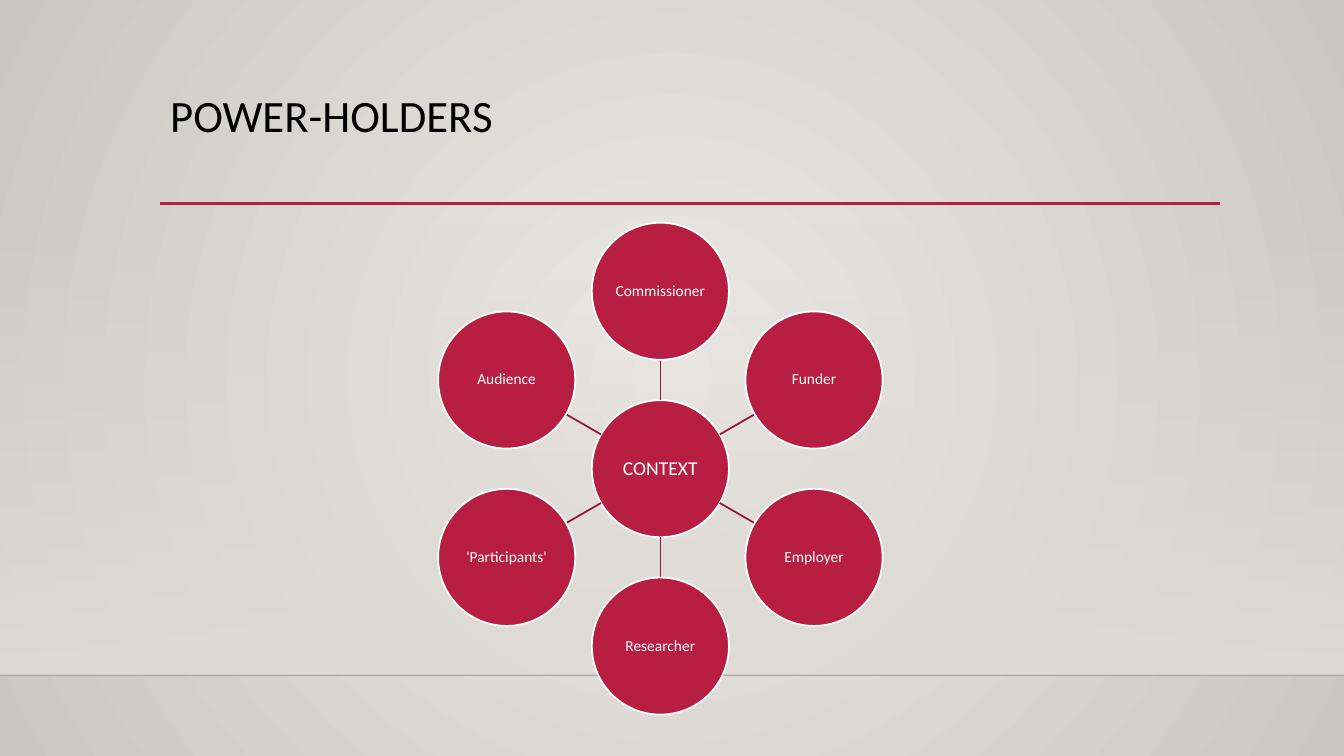
from math import cos, radians, sin

from pptx import Presentation
from pptx.dml.color import RGBColor
from pptx.enum.shapes import MSO_CONNECTOR as Link, MSO_SHAPE as Shape
from pptx.enum.text import MSO_ANCHOR as Anchor, PP_ALIGN as Align
from pptx.oxml import parse_xml
from pptx.oxml.ns import nsdecls, qn
from pptx.util import Inches, Pt

TITLE = "POWER-HOLDERS"
HUB = "CONTEXT"
HOLDERS = ["Commissioner", "Funder", "Employer", "Researcher", "'Participants'", "Audience"]

FONT = "Calibri"
RED, DARK, WHITE, BLACK = "B71E42", "931835", "FFFFFF", "000000"
GLOW, EDGE, BAND, FLOOR = "ECEAE7", "CAC7C1", "DFDBD5", "000001"

WIDE, HIGH = 13.33, 7.5
MID_X, MID_Y = 6.55, 4.65
RADIUS, ORBIT = 0.68, 1.76


def color(code):
    return RGBColor.from_string(code)


def fade(node, share):
    rgb = node.find(".//" + qn("a:srgbClr"))
    rgb.append(parse_xml(f'<a:alpha {nsdecls("a")} val="{share * 1000}"/>'))


def blend(fill, start, end):
    fill.gradient()
    for stop, code in zip(fill.gradient_stops, (start, end)):
        stop.color.rgb = color(code)


def rule(x1, y1, x2, y2, code, width):
    line = slide.shapes.add_connector(
        Link.STRAIGHT, Inches(x1), Inches(y1), Inches(x2), Inches(y2))
    line.line.color.rgb = color(code)
    line.line.width = Pt(width)
    line._element.spPr.append(parse_xml(f'<a:effectLst {nsdecls("a")}/>'))
    return line


def write(para, text, size, code):
    para.text = text
    para.line_spacing = 0.9
    para.font.name = FONT
    para.font.size = Pt(size)
    para.font.color.rgb = color(code)


def disc(x, y, text, size):
    shape = slide.shapes.add_shape(
        Shape.OVAL, Inches(x - RADIUS), Inches(y - RADIUS),
        Inches(2 * RADIUS), Inches(2 * RADIUS))
    shape.shadow.inherit = False
    shape.fill.solid()
    shape.fill.fore_color.rgb = color(RED)
    shape.line.color.rgb = color(WHITE)
    shape.line.width = Pt(1.25)
    frame = shape.text_frame
    frame.word_wrap = True
    frame.vertical_anchor = Anchor.MIDDLE
    frame.margin_left = frame.margin_right = Inches(0.01)
    frame.margin_top = frame.margin_bottom = Inches(0.01)
    para = frame.paragraphs[0]
    para.alignment = Align.CENTER
    write(para, text, size, WHITE)


def polar(reach, angle):
    return MID_X + reach * cos(angle), MID_Y + reach * sin(angle)


deck = Presentation()
deck.slide_width, deck.slide_height = Inches(WIDE), Inches(HIGH)
slide = deck.slides.add_slide(deck.slide_layouts[6])

blend(slide.background.fill, GLOW, EDGE)
lin = slide.element.find(".//" + qn("a:lin"))
lin.getparent().replace(lin, parse_xml(
    f'<a:path {nsdecls("a")} path="circle">'
    '<a:fillToRect l="50000" t="50000" r="50000" b="50000"/></a:path>'))

wall = slide.shapes.add_shape(
    Shape.RECTANGLE, 0, Inches(2.21), Inches(WIDE), Inches(4.49))
wall.shadow.inherit = False
wall.line.fill.background()
blend(wall.fill, BAND, BAND)
wall.fill.gradient_angle = 270
fade(wall._element.spPr, 0)

floor = rule(0, 6.7, WIDE, 6.7, FLOOR, 1)
fade(floor._element.spPr, 20)
rule(1.59, 2.02, 12.1, 2.02, RED, 2.5)

head = slide.shapes.add_textbox(Inches(1.59), Inches(0.88), Inches(10.5), Inches(1.15))
head.text_frame.word_wrap = True
write(head.text_frame.paragraphs[0], TITLE, 32, BLACK)

disc(MID_X, MID_Y, HUB, 14)
for i, name in enumerate(HOLDERS):
    angle = radians(i * 360 / len(HOLDERS) - 90)
    rule(*polar(RADIUS, angle), *polar(ORBIT - RADIUS, angle), DARK, 1.25)
    disc(*polar(ORBIT, angle), name, 11)

deck.save("out.pptx")
